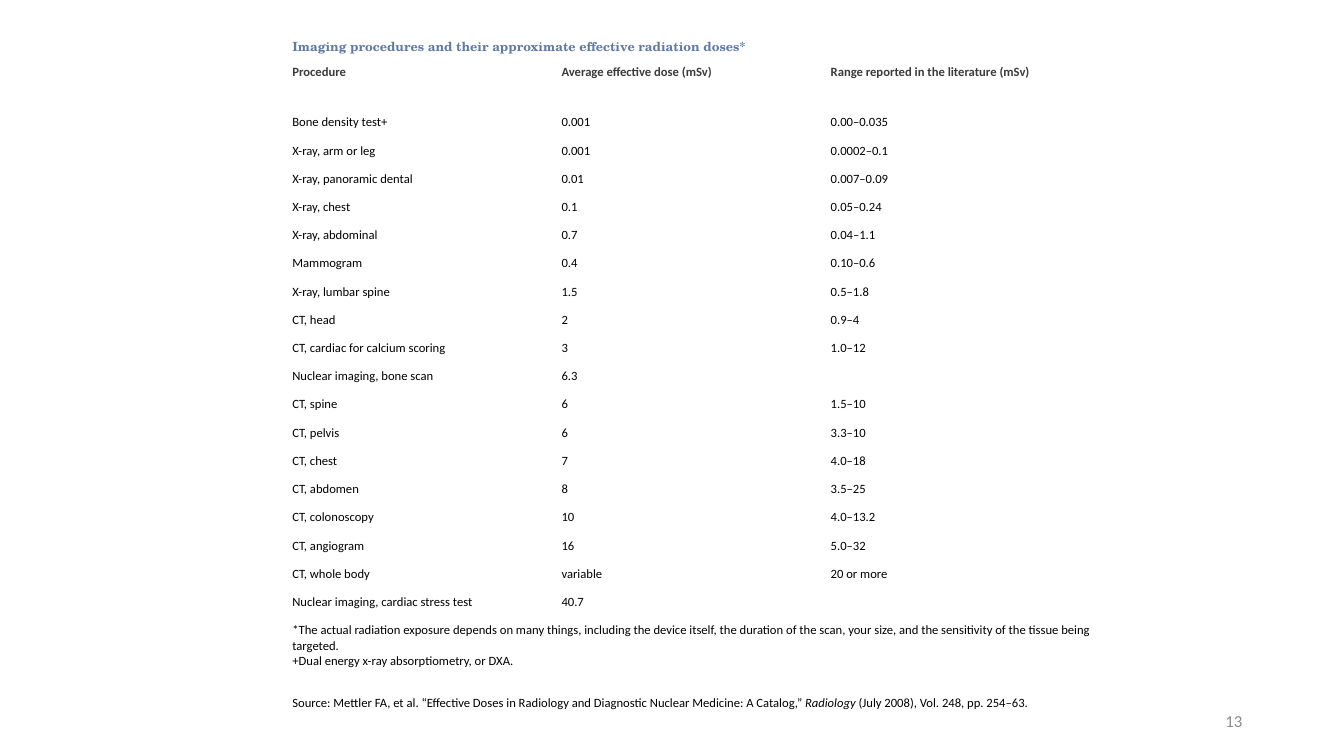
from lxml.etree import SubElement
from pptx import Presentation
from pptx.dml.color import RGBColor
from pptx.enum.text import MSO_ANCHOR, PP_ALIGN
from pptx.oxml.ns import qn
from pptx.util import Pt

# Content
TITLE = "Imaging procedures and their approximate effective radiation doses*"
HEADINGS = ("Procedure", "Average effective dose (mSv)", "Range reported in the literature (mSv)")
DOSES = [
    ("Bone density test+", "0.001", "0.00–0.035"),
    ("X-ray, arm or leg", "0.001", "0.0002–0.1"),
    ("X-ray, panoramic dental", "0.01", "0.007–0.09"),
    ("X-ray, chest", "0.1", "0.05–0.24"),
    ("X-ray, abdominal", "0.7", "0.04–1.1"),
    ("Mammogram", "0.4", "0.10–0.6"),
    ("X-ray, lumbar spine", "1.5", "0.5–1.8"),
    ("CT, head", "2", "0.9–4"),
    ("CT, cardiac for calcium scoring", "3", "1.0–12"),
    ("Nuclear imaging, bone scan", "6.3", ""),
    ("CT, spine", "6", "1.5–10"),
    ("CT, pelvis", "6", "3.3–10"),
    ("CT, chest", "7", "4.0–18"),
    ("CT, abdomen", "8", "3.5–25"),
    ("CT, colonoscopy", "10", "4.0–13.2"),
    ("CT, angiogram", "16", "5.0–32"),
    ("CT, whole body", "variable", "20 or more"),
    ("Nuclear imaging, cardiac stress test", "40.7", ""),
]
FOOTNOTES = (
    "*The actual radiation exposure depends on many things, including the device itself, "
    "the duration of the scan, your size, and the sensitivity of the tissue being targeted.",
    "+Dual energy x-ray absorptiometry, or DXA.",
)
SOURCE = (
    "Source: Mettler FA, et al. “Effective Doses in Radiology and Diagnostic Nuclear Medicine: A Catalog,” ",
    "Radiology",
    " (July 2008), Vol. 248, pp. 254–63.",
)
PAGE_NUMBER = "13"

# Formats
COLORS = {"paper": "FFFFFF", "title": "607AA3", "heading": "3B3B3B", "body": "000000", "page": "8C8C8C"}
BODY = {"name": "Calibri", "size": Pt(9), "bold": False, "color": "body"}
HEADING = {**BODY, "bold": True, "color": "heading"}
TITLE_FORMAT = {**HEADING, "name": "TeX Gyre Schola", "color": "title"}
JOURNAL = {**BODY, "italic": True}
PAGE = {**BODY, "size": Pt(12), "color": "page"}

# Layout in px, 100 px to the inch
PX = 9144
SLIDE_WIDTH, SLIDE_HEIGHT = 1333, 750
TABLE_LEFT, TABLE_TOP, COLUMN_WIDTH = 288, 34, 267
ROW_HEIGHT, HEADING_HEIGHT, FOOTNOTE_HEIGHT, SOURCE_HEIGHT = 28, 50, 72, 50
CELL_MARGIN = 2
PAGE_BOX = (942, 695, 300, 40)


def color(name):
    return RGBColor.from_string(COLORS[name])


def add_run(paragraph, text, style):
    run = paragraph.add_run()
    run.text = text
    for key, value in style.items():
        if key == "color":
            run.font.color.rgb = color(value)
        else:
            setattr(run.font, key, value)


def write(frame, paragraphs):
    """Fill a text frame; each paragraph is a list of (text, style) runs."""
    for index, runs in enumerate(paragraphs):
        paragraph = frame.add_paragraph() if index else frame.paragraphs[0]
        for text, style in runs:
            add_run(paragraph, text, style)


presentation = Presentation()
presentation.slide_width = SLIDE_WIDTH * PX
presentation.slide_height = SLIDE_HEIGHT * PX
slide = presentation.slides.add_slide(presentation.slide_layouts[6])

# Rows: a list of one cell spans all columns
rows = [
    [[[(TITLE, TITLE_FORMAT)]]],
    [[[(heading, HEADING)]] for heading in HEADINGS],
    *[[[[(value, BODY)]] if value else [] for value in dose] for dose in DOSES],
    [[[(note, BODY)] for note in FOOTNOTES]],
    [[list(zip(SOURCE, (BODY, JOURNAL, BODY)))]],
]
heights = [ROW_HEIGHT, HEADING_HEIGHT, *[ROW_HEIGHT] * len(DOSES), FOOTNOTE_HEIGHT, SOURCE_HEIGHT]
columns = len(HEADINGS)

# Dose table
table = slide.shapes.add_table(
    len(rows), columns, TABLE_LEFT * PX, TABLE_TOP * PX,
    columns * COLUMN_WIDTH * PX, sum(heights) * PX,
).table
table.first_row = table.horz_banding = False
for column in table.columns:
    column.width = COLUMN_WIDTH * PX
for row, height in zip(table.rows, heights):
    row.height = height * PX
for cell in table.iter_cells():
    cell.fill.solid()
    cell.fill.fore_color.rgb = color("paper")
    for side in ("left", "right", "top", "bottom"):
        setattr(cell, f"margin_{side}", CELL_MARGIN * PX)

for row_index, cells in enumerate(rows):
    if len(cells) == 1:
        table.cell(row_index, 0).merge(table.cell(row_index, columns - 1))
    for column_index, paragraphs in enumerate(cells):
        write(table.cell(row_index, column_index).text_frame, paragraphs)

# Empty cells keep the body size so that their rows stay low
for cell in table.iter_cells():
    if not cell.text_frame.text:
        SubElement(cell.text_frame.paragraphs[0]._p, qn("a:endParaRPr"), sz="900")

# Page number
page_frame = slide.shapes.add_textbox(*[length * PX for length in PAGE_BOX]).text_frame
page_frame.word_wrap = True
page_frame.vertical_anchor = MSO_ANCHOR.MIDDLE
write(page_frame, [[(PAGE_NUMBER, PAGE)]])
page_frame.paragraphs[0].alignment = PP_ALIGN.RIGHT

presentation.save("out.pptx")
